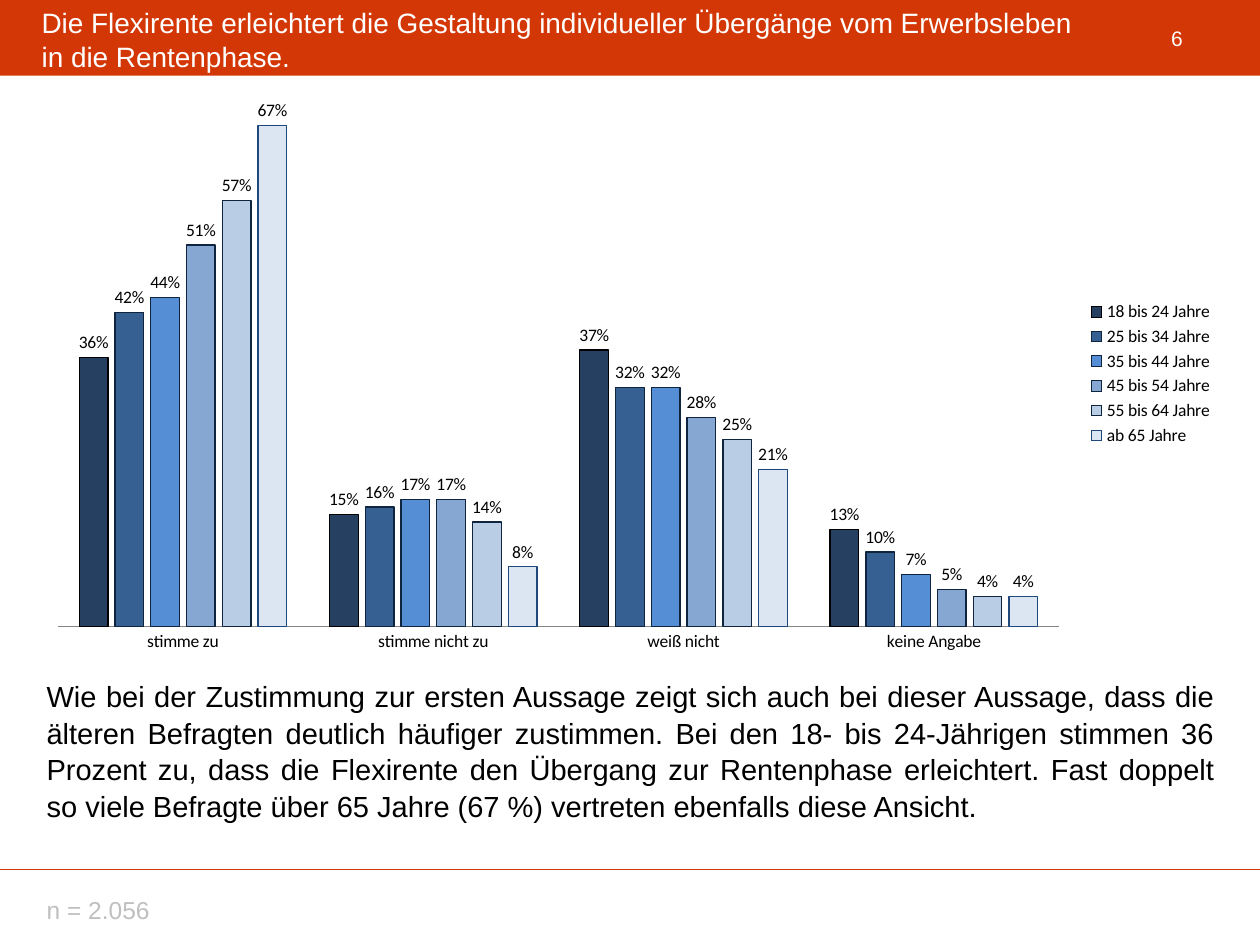
from lxml import etree
from pptx import Presentation
from pptx.chart.data import CategoryChartData
from pptx.dml.color import RGBColor
from pptx.enum import chart as ch, shapes, text
from pptx.oxml import parse_xml
from pptx.oxml.ns import nsdecls, qn
from pptx.util import Inches, Pt


def rgb(value):
    return RGBColor.from_string(value)


def write(box, words, place, size, color, anchor, align):
    box.left, box.top, box.width, box.height = (Inches(n) for n in place)
    frame = box.text_frame
    frame.text = words
    frame_format = {"word_wrap": True, "auto_size": text.MSO_AUTO_SIZE.NONE,
                    "vertical_anchor": anchor}
    for key, value in frame_format.items():
        setattr(frame, key, value)
    paragraph = frame.paragraphs[0]
    properties = paragraph._p.get_or_add_pPr()
    properties.set("marL", "0")
    properties.set("indent", "0")
    etree.SubElement(properties, qn("a:buNone"))
    paragraph.alignment = align
    paragraph.space_before = Pt(0)
    for run in paragraph.runs:
        run_format = {"name": "Arial", "size": Pt(size), "bold": False}
        for key, value in run_format.items():
            setattr(run.font, key, value)
        run.font.color.rgb = rgb(color)
    return paragraph


RED = "D43706"
MIDDLE, TOP = text.MSO_ANCHOR.MIDDLE, text.MSO_ANCHOR.TOP
LEFT, CENTER, JUSTIFY = text.PP_ALIGN.LEFT, text.PP_ALIGN.CENTER, text.PP_ALIGN.JUSTIFY

deck = Presentation()
deck.slide_width, deck.slide_height = Inches(10), Inches(7.5)
slide = deck.slides.add_slide(deck.slide_layouts[3])
headline, sample, comment = list(slide.placeholders)[:3]

# Footer rule and header band
rule = slide.shapes.add_connector(shapes.MSO_CONNECTOR.STRAIGHT,
                                  Inches(0), Inches(6.9), Inches(10), Inches(6.9))
rule.line.color.rgb = rgb(RED)
rule.line.width = Pt(0.75)
etree.SubElement(rule._element.spPr, qn("a:effectLst"))

band = slide.shapes.add_shape(shapes.MSO_SHAPE.RECTANGLE, 0, 0, Inches(10), Inches(0.6))
band.shadow.inherit = False
band.fill.solid()
band.fill.fore_color.rgb = rgb(RED)
band.line.fill.background()

# Page number
page = slide.shapes.add_textbox(0, 0, 0, 0)
write(page, "6", (8.94, 0.1, 0.8, 0.4), 12, "FFFFFF", MIDDLE, CENTER)

# Title, sample size and comment, in front of the band
for placeholder in (headline, sample, comment):
    slide.shapes._spTree.append(placeholder._element)
write(headline, "Die Flexirente erleichtert die Gestaltung individueller Übergänge "
      "vom Erwerbsleben \vin die Rentenphase.",
      (0.23, 0.16, 9.51, 0.3), 16, "FFFFFF", MIDDLE, LEFT)
write(sample, "n = 2.056", (0.27, 7.06, 8.11, 0.32), 14, "BFBFBF", MIDDLE, LEFT)
remark = write(
    comment,
    "Wie bei der Zustimmung zur ersten Aussage zeigt sich auch bei dieser Aussage, "
    "dass die älteren Befragten deutlich häufiger zustimmen. Bei den 18- bis "
    "24-Jährigen stimmen 36 Prozent zu, dass die Flexirente den Übergang zur "
    "Rentenphase erleichtert. Fast doppelt so viele Befragte über 65 Jahre (67 %) "
    "vertreten ebenfalls diese Ansicht.",
    (0.27, 5.32, 9.46, 1.42), 16.6, "000000", TOP, JUSTIFY)
remark.line_spacing = 1.05

# Answers by age group: name, values, fill, outline
age_groups = [
    ("18 bis 24 Jahre", (0.36, 0.15, 0.37, 0.13), "254061", "000000"),
    ("25 bis 34 Jahre", (0.42, 0.16, 0.32, 0.10), "376092", "0F243E"),
    ("35 bis 44 Jahre", (0.44, 0.17, 0.32, 0.07), "558ED5", "0F243E"),
    ("45 bis 54 Jahre", (0.51, 0.17, 0.28, 0.05), "85A7D1", "0F243E"),
    ("55 bis 64 Jahre", (0.57, 0.14, 0.25, 0.04), "B9CDE5", "0F243E"),
    ("ab 65 Jahre", (0.67, 0.08, 0.21, 0.04), "DCE6F2", "1F497D"),
]
answers = CategoryChartData(number_format="###0%")
answers.categories = ["stimme zu", "stimme nicht zu", "weiß nicht", "keine Angabe"]
for name, shares, _, _ in age_groups:
    answers.add_series(name, shares)
chart = slide.shapes.add_chart(ch.XL_CHART_TYPE.COLUMN_CLUSTERED, Inches(0.27),
                               Inches(0.68), Inches(9.46), Inches(4.57), answers).chart
chart.has_title = False
chart.font.name, chart.font.size = "Calibri", Pt(10)
chart.font.color.rgb = rgb("000000")
chart.has_legend = True
chart.legend.position = ch.XL_LEGEND_POSITION.RIGHT
chart.legend.include_in_layout = False

# Axes
chart.category_axis.major_tick_mark = ch.XL_TICK_MARK.NONE
chart.category_axis.format.line.color.rgb = rgb("868686")
scale_format = {"visible": False, "has_major_gridlines": False,
                "minimum_scale": 0, "maximum_scale": 0.7}
for key, value in scale_format.items():
    setattr(chart.value_axis, key, value)

# Columns and their labels
columns = chart.plots[0]
column_format = {"gap_width": 150, "overlap": -25, "vary_by_categories": False}
for key, value in column_format.items():
    setattr(columns, key, value)
for series, (_, _, fill, outline) in zip(columns.series, age_groups):
    series.format.fill.solid()
    series.format.fill.fore_color.rgb = rgb(fill)
    series.format.line.color.rgb = rgb(outline)
    series.format.line.width = Pt(0.75)
    label_format = {"show_value": True, "number_format": "###0%",
                    "number_format_is_linked": False,
                    "position": ch.XL_LABEL_POSITION.OUTSIDE_END}
    for key, value in label_format.items():
        setattr(series.data_labels, key, value)

# Fixed plot area, leaving room for the legend
plot_area = chart._chartSpace.chart.plotArea
for old in plot_area.findall(qn("c:layout")):
    plot_area.remove(old)
fractions = "".join(f'<c:{key} val="{value}"/>' for key, value in
                    {"x": 0.02, "y": 0.03, "w": 0.84, "h": 0.91}.items())
plot_area.insert(0, parse_xml(
    f'<c:layout {nsdecls("c")}><c:manualLayout><c:layoutTarget val="inner"/>'
    f'<c:xMode val="edge"/><c:yMode val="edge"/>{fractions}</c:manualLayout></c:layout>'))

deck.save("out.pptx")
